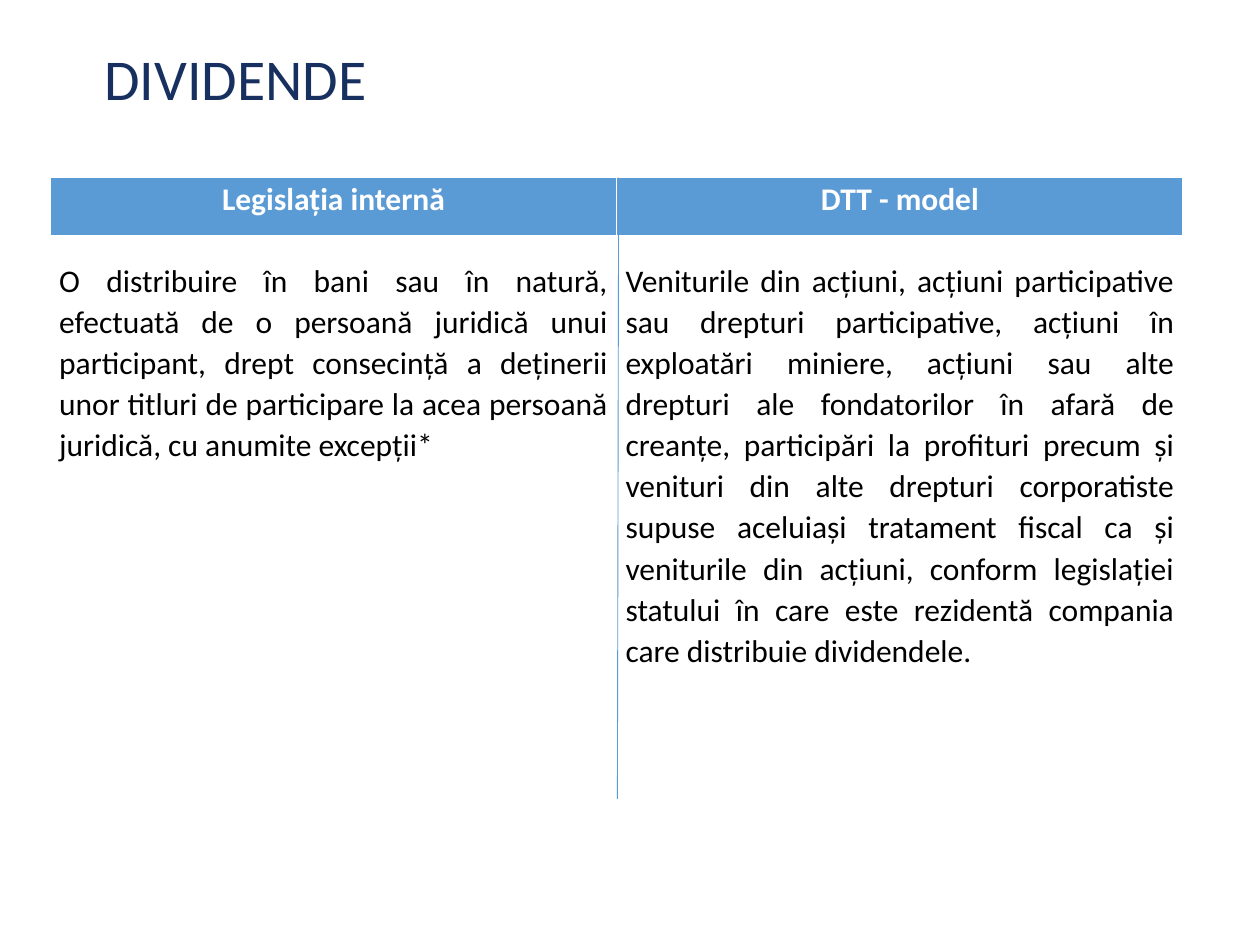
from dataclasses import dataclass

from lxml import etree
from pptx import Presentation
from pptx.dml.color import RGBColor
from pptx.enum.shapes import MSO_CONNECTOR
from pptx.enum.text import MSO_ANCHOR, PP_ALIGN
from pptx.oxml.ns import qn
from pptx.util import Inches, Pt

CENTER, JUSTIFY = PP_ALIGN.CENTER, PP_ALIGN.JUSTIFY
TOP = MSO_ANCHOR.TOP
STRAIGHT = MSO_CONNECTOR.STRAIGHT
FONT = "Calibri"
NAVY, BLUE, WHITE, BLACK = "173060", "5B9BD5", "FFFFFF", "000000"


@dataclass
class RowStyle:
    height: float
    top_margin: float
    fill: str
    color: str
    bold: bool
    align: PP_ALIGN
    bottom_border: float


HEADER = RowStyle(0.47, 0, BLUE, WHITE, True, CENTER, 3)
BODY = RowStyle(4.46, 0.18, WHITE, BLACK, False, JUSTIFY, 1)

ROWS = [
    (HEADER, ["Legislația internă", "DTT - model"]),
    (BODY, [
        "O distribuire în bani sau în natură, efectuată de o persoană juridică "
        "unui participant, drept consecință a deținerii unor titluri de "
        "participare la acea persoană juridică, cu anumite excepții*",
        "Veniturile din acțiuni, acțiuni participative sau drepturi "
        "participative, acțiuni în exploatări miniere, acțiuni sau alte "
        "drepturi ale fondatorilor în afară de creanțe, participări la "
        "profituri precum și venituri din alte drepturi corporatiste supuse "
        "aceluiași tratament fiscal ca și veniturile din acțiuni, conform "
        "legislației statului în care este rezidentă compania care "
        "distribuie dividendele.",
    ]),
]


def rgb(value: str) -> RGBColor:
    return RGBColor.from_string(value)


def style_paragraph(paragraph, size: float, color: str, spacing: float,
                    bold: bool = False) -> None:
    paragraph.line_spacing = spacing
    font = paragraph.font
    font.name, font.size, font.bold = FONT, Pt(size), bold
    font.color.rgb = rgb(color)


def add_border(cell, side: str, width: float) -> None:
    line = etree.SubElement(cell._tc.get_or_add_tcPr(), qn(f"a:ln{side}"),
                            w=str(Pt(width)))
    fill = etree.SubElement(line, qn("a:solidFill"))
    etree.SubElement(fill, qn("a:srgbClr"), val=WHITE)


def fill_cell(cell, text: str, style: RowStyle) -> None:
    cell.margin_left = cell.margin_right = Inches(0.07)
    cell.margin_top, cell.margin_bottom = Inches(style.top_margin), 0
    cell.vertical_anchor = TOP
    for side in "LRT":
        add_border(cell, side, 1)
    add_border(cell, "B", style.bottom_border)
    cell.fill.solid()
    cell.fill.fore_color.rgb = rgb(style.fill)
    cell.text = text
    paragraph = cell.text_frame.paragraphs[0]
    paragraph.alignment = style.align
    style_paragraph(paragraph, 18, style.color, 1.07, style.bold)


prs = Presentation()
prs.slide_width, prs.slide_height = Inches(10), Inches(7.5)
slide = prs.slides.add_slide(prs.slide_layouts[6])

# Title
title = slide.shapes.add_textbox(
    Inches(0.73), Inches(0.4), Inches(8.46), Inches(0.89)).text_frame
title.word_wrap = True
title.vertical_anchor = TOP
title.margin_top = 0
title.text = "DIVIDENDE"
style_paragraph(title.paragraphs[0], 33, NAVY, 0.9)

# Comparison table
comparison = slide.shapes.add_table(
    len(ROWS), 2, Inches(0.4), Inches(1.41), Inches(8.99), Inches(4.93)).table
for row, (style, texts) in zip(comparison.rows, ROWS):
    row.height = Inches(style.height)
    for cell, text in zip(row.cells, texts):
        fill_cell(cell, text, style)

# Divider between the columns
divider = slide.shapes.add_connector(
    STRAIGHT, Inches(4.91), Inches(1.41), Inches(4.9), Inches(6.34))
divider.line.color.rgb = rgb(BLUE)
divider.line.width = Pt(0.5)
etree.SubElement(divider._element.spPr, qn("a:effectLst"))

prs.save("out.pptx")
